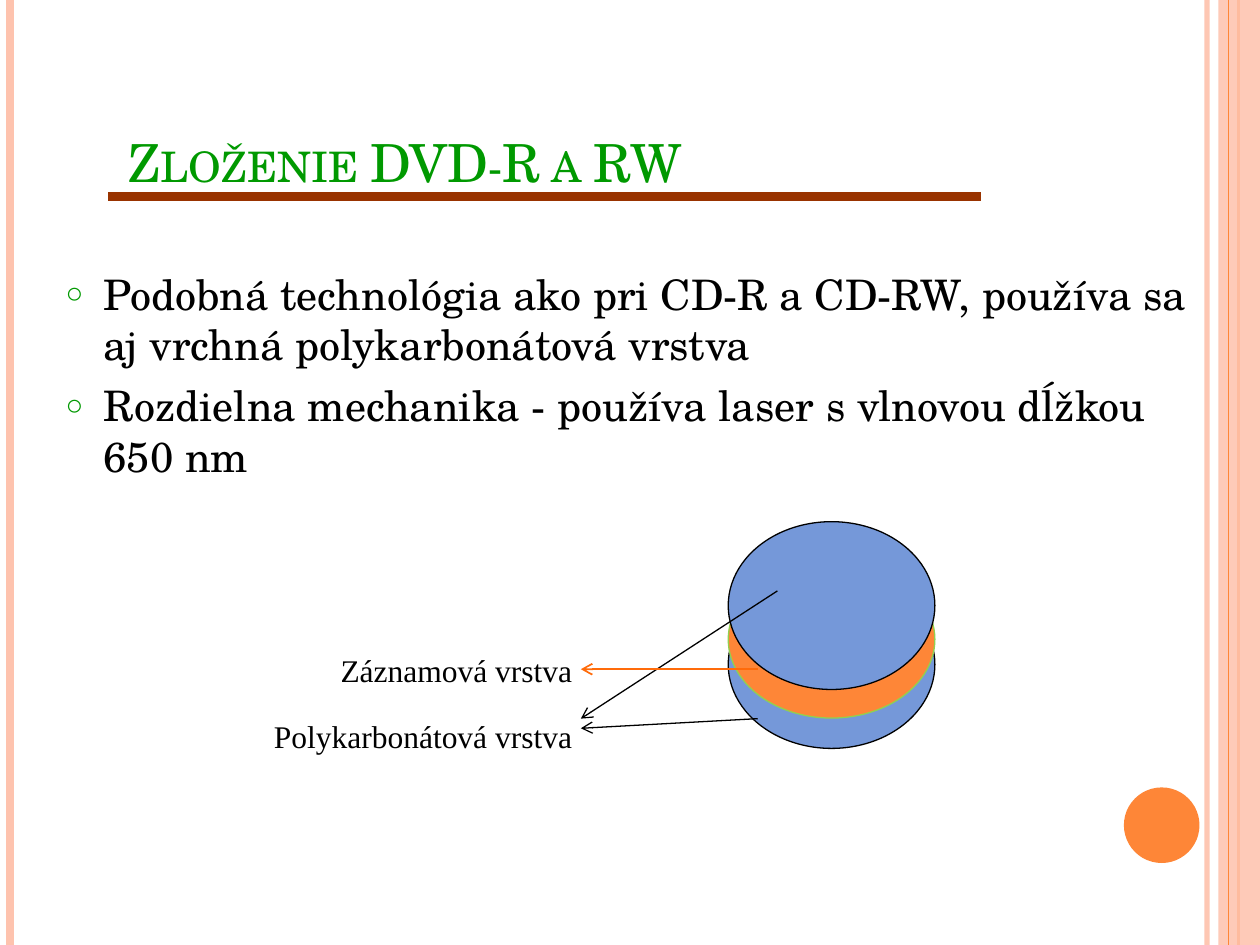
from dataclasses import dataclass

from lxml import etree
from pptx import Presentation
from pptx.dml.color import RGBColor
from pptx.enum.shapes import MSO_CONNECTOR as Connector, MSO_SHAPE as Preset
from pptx.enum.text import MSO_ANCHOR as Anchor, MSO_AUTO_SIZE as AutoSize, PP_ALIGN as Align
from pptx.oxml.ns import qn
from pptx.util import Inches, Pt

BLACK = RGBColor(0x00, 0x00, 0x00)
GREEN = RGBColor(0x00, 0x99, 0x00)
LIME = RGBColor(0x92, 0xD0, 0x50)
BROWN = RGBColor(0x99, 0x33, 0x00)
ORANGE = RGBColor(0xFE, 0x86, 0x37)
DEEP_ORANGE = RGBColor(0xFF, 0x6B, 0x0A)
PEACH = RGBColor(0xFE, 0xC3, 0xAE)
BLUE = RGBColor(0x75, 0x98, 0xD9)

TITLE_FORMAT = {"name": "TeX Gyre Schola", "size": Pt(30), "bold": False}
BODY_FORMAT = {"name": "TeX Gyre Schola", "size": Pt(24)}
LABEL_FORMAT = {"name": "Times New Roman", "size": Pt(18)}


@dataclass
class Box:
    left: float
    top: float
    width: float
    height: float

    def point(self, across, down):
        return (Inches(self.left + self.width * across / 100),
                Inches(self.top + self.height * down / 100))

    def inner(self, across, down, wide, high):
        return Box(self.left + self.width * across / 100,
                   self.top + self.height * down / 100,
                   self.width * wide / 100, self.height * high / 100)

    def frame(self):
        return [Inches(value) for value in (self.left, self.top, self.width, self.height)]


def place(shape, box):
    for name, value in zip(("left", "top", "width", "height"), box.frame()):
        setattr(shape, name, value)


def format_font(font, values, color):
    for name, value in values.items():
        setattr(font, name, value)
    font.color.rgb = color


def add_child(parent, tag, **attributes):
    return etree.SubElement(parent, qn(tag), attributes)


def set_alpha(element, percent):
    for color in element.iter(qn("a:srgbClr")):
        add_child(color, "a:alpha", val=str(percent * 1000))


def add_line(slide, start, end, color, width, arrow=False):
    line = slide.shapes.add_connector(Connector.STRAIGHT, *start, *end)
    line.line.color.rgb = color
    line.line.width = Pt(width)
    properties = line.element.spPr
    if arrow:
        add_child(properties.find(qn("a:ln")), "a:tailEnd", type="arrow")
    add_child(properties, "a:effectLst")
    return line


def add_filled(slide, preset, box, fill, outline=None):
    shape = slide.shapes.add_shape(preset, *box.frame())
    shape.shadow.inherit = False
    shape.fill.solid()
    shape.fill.fore_color.rgb = fill
    if outline is None:
        shape.line.fill.background()
    else:
        shape.line.color.rgb = outline
        shape.line.width = Pt(0.75)
    return shape


def add_vertical(slide, box, across, color, width):
    return add_line(slide, box.point(across, 0), box.point(across, 100), color, width)


def build_frame(slide, box):
    set_alpha(add_vertical(slide, box, 95.8, PEACH, 3).element, 93)
    add_vertical(slide, box, 0.8, PEACH, 4.5)
    add_vertical(slide, box, 98.3, ORANGE, 1.5)
    band = add_filled(slide, Preset.RECTANGLE, box.inner(96.7, 0, 3.3, 100), PEACH)
    set_alpha(band.element, 87)
    add_vertical(slide, box, 97.5, ORANGE, 0.75)
    add_filled(slide, Preset.OVAL, box.inner(89.2, 83.33, 6, 8), ORANGE)


def build_title(slide, box, text):
    title = slide.shapes.title
    place(title, box)
    frame = title.text_frame
    frame.text = text
    frame.auto_size = AutoSize.NONE
    frame.vertical_anchor = Anchor.BOTTOM
    paragraph = frame.paragraphs[0]
    paragraph.alignment = Align.LEFT
    run = paragraph.runs[0]
    format_font(run.font, TITLE_FORMAT, GREEN)
    run.font._element.set("cap", "small")
    add_line(slide, box.point(-1, 98.4), box.point(109.8, 98.4), BROWN, 4.75)


def add_bullet(paragraph):
    properties = paragraph._p.get_or_add_pPr()
    for name, value in {"marL": Inches(0.3), "indent": Inches(-0.3)}.items():
        properties.set(name, str(int(value)))
    color = add_child(properties, "a:buClr")
    add_child(color, "a:srgbClr", val=str(GREEN))
    add_child(properties, "a:buSzPct", val="70000")
    add_child(properties, "a:buChar", char="○")


def build_body(slide, box, items):
    body = slide.placeholders[1]
    place(body, box)
    frame = body.text_frame
    frame.text = "\n".join(items)
    frame.auto_size = AutoSize.NONE
    for paragraph in frame.paragraphs:
        paragraph.space_before = Pt(6)
        add_bullet(paragraph)
        format_font(paragraph.runs[0].font, BODY_FORMAT, BLACK)


def build_disc(slide, box):
    layers = [(26, 74, BLUE, BLACK), (17.2, 69.4, ORANGE, LIME), (0, 74, BLUE, BLACK)]
    for down, high, fill, outline in layers:
        add_filled(slide, Preset.OVAL, box.inner(0, down, 100, high), fill, outline)


def build_arrows(slide, box):
    arrows = [((100, 0), (0, 93), BLACK, 0.75),
              ((90, 93), (0, 100), BLACK, 0.75),
              ((90, 57), (0, 57), DEEP_ORANGE, 1)]
    for start, end, color, width in arrows:
        add_line(slide, box.point(*start), box.point(*end), color, width, arrow=True)


def build_labels(slide, box, labels):
    frame = slide.shapes.add_textbox(*box.frame()).text_frame
    frame.word_wrap = True
    frame.text = "\n".join(labels)
    for paragraph in frame.paragraphs:
        paragraph.alignment = Align.RIGHT
        paragraph.space_after = Pt(16)
        format_font(paragraph.runs[0].font, LABEL_FORMAT, BLACK)


def main():
    presentation = Presentation()
    presentation.slide_width = Inches(10)
    presentation.slide_height = Inches(7.5)
    slide = presentation.slides.add_slide(presentation.slide_layouts[1])
    build_frame(slide, Box(0, 0, 10, 7.5))
    build_title(slide, Box(0.92, 0.33, 6.25, 1.25), "Zloženie DVD-R a RW")
    build_body(slide, Box(0.42, 2.08, 9.25, 4.5), [
        "Podobná technológia ako pri CD-R a CD-RW, používa sa aj vrchná polykarbonátová vrstva",
        "Rozdielna mechanika - používa laser s vlnovou dĺžkou 650 nm",
    ])
    build_disc(slide, Box(5.78, 4.14, 1.64, 1.8))
    build_arrows(slide, Box(4.61, 4.69, 1.56, 1.09))
    build_labels(slide, Box(1.02, 5.12, 3.62, 0.9),
                 ["Záznamová vrstva", "Polykarbonátová vrstva"])
    presentation.save("out.pptx")


if __name__ == "__main__":
    main()
